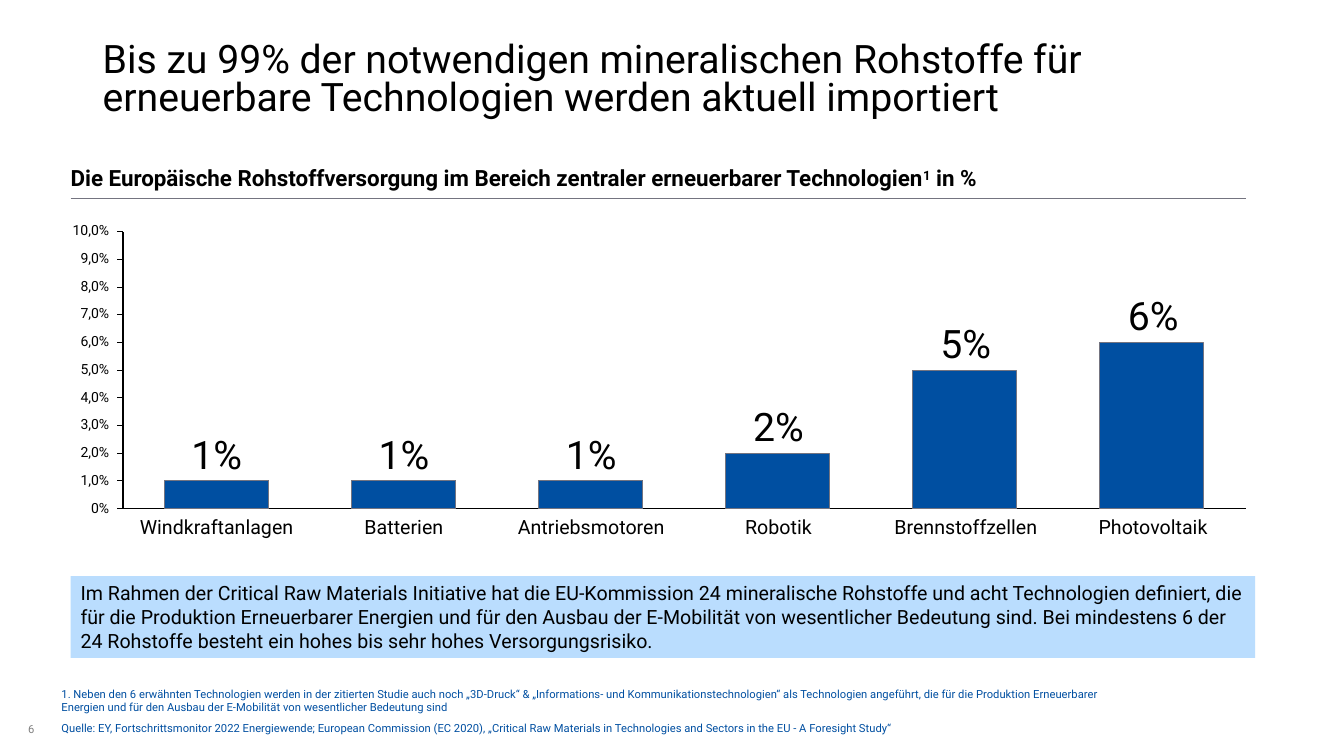
import pptx
import pptx.chart.data
import pptx.dml.color
import pptx.enum.chart
import pptx.enum.shapes
import pptx.enum.text
import pptx.oxml
import pptx.oxml.ns
import pptx.util

Cm, Pt = pptx.util.Cm, pptx.util.Pt
Align, Anchor = pptx.enum.text.PP_ALIGN, pptx.enum.text.MSO_ANCHOR
FONT = "Roboto"
HEX = {"black": "000000", "blue": "004FA1", "pale": "BADDFE", "line": "747480", "grey": "808080"}
RGB = {name: pptx.dml.color.RGBColor.from_string(code) for name, code in HEX.items()}

deck = pptx.Presentation()
deck.slide_width, deck.slide_height = Cm(33.87), Cm(19.05)
slide = deck.slides.add_slide(deck.slide_layouts[6])


def write(box, lines, size, color="black", align=Align.LEFT, anchor=Anchor.BOTTOM, pad=(0, 0, 0, 0)):
    """Fill a shape with paragraphs; each line is a list of runs."""
    frame = box.text_frame
    frame.word_wrap, frame.vertical_anchor = True, anchor
    frame.margin_left, frame.margin_top, frame.margin_right, frame.margin_bottom = map(Cm, pad)
    for i, texts in enumerate(lines):
        para = frame.paragraphs[0] if i == 0 else frame.add_paragraph()
        para.alignment = align
        for text in texts:
            run = para.add_run()
            run.text = text
            run.font.name, run.font.size = FONT, Pt(size)
            run.font.color.rgb = RGB[color]
    return frame.paragraphs


def label(x, y, w, h, lines, size, **style):
    """Add a text box, with lengths in centimetres."""
    return write(slide.shapes.add_textbox(Cm(x), Cm(y), Cm(w), Cm(h)), lines, size, **style)


INSET = (0.25, 0.13, 0.25, 0.13)

# Title and chart heading
title = label(2.34, 0.53, 26.49, 2.59, [[
    "Bis zu 99% der notwendigen mineralischen Rohstoffe für erneuerbare Technologien werden aktuell importiert"
]], 28, pad=INSET)
title[0].line_spacing = 0.8

head = label(1.78, 4.11, 29.62, 0.89, [[
    "Die Europäische Rohstoffversorgung im Bereich zentraler erneuerbarer Technologien", "1", " in %"
]], 16, pad=(0, 0, 0, 0.18))
for run in head[0].runs:
    run.font.bold = True
head[0].runs[1].font._element.set("baseline", "30000")

rule = slide.shapes.add_connector(pptx.enum.shapes.MSO_CONNECTOR.STRAIGHT, Cm(1.78), Cm(5), Cm(31.4), Cm(5))
rule.line.color.rgb, rule.line.width = RGB["line"], Pt(0.75)
rule._element.spPr.append(pptx.oxml.parse_xml(f'<a:effectLst {pptx.oxml.ns.nsdecls("a")}/>'))

# Column chart
data = pptx.chart.data.CategoryChartData()
data.categories = ["1", "2", "3", "4", "5", "6"]
data.add_series("Series 1", [17, 17, 17, 33, 83, 100])
chart = slide.shapes.add_chart(
    pptx.enum.chart.XL_CHART_TYPE.COLUMN_STACKED, Cm(2.87), Cm(5.61), Cm(28.75), Cm(7.44), data).chart
chart.has_legend = chart.has_title = False
chart.font.name, chart.font.size = FONT, Pt(10)
chart.font.color.rgb = RGB["black"]

plot = chart.plots[0]
plot.gap_width, plot.overlap, plot.vary_by_categories = 80, 100, False
bars = plot.series[0].format
bars.fill.solid()
bars.fill.fore_color.rgb = RGB["blue"]
bars.line.color.rgb, bars.line.width = RGB["line"], Pt(0.75)

Tick = pptx.enum.chart.XL_TICK_MARK
for axis, mark in ((chart.category_axis, Tick.NONE), (chart.value_axis, Tick.OUTSIDE)):
    axis.major_tick_mark, axis.minor_tick_mark = mark, Tick.NONE
    axis.tick_label_position = pptx.enum.chart.XL_TICK_LABEL_POSITION.NONE
    axis.has_major_gridlines = False
    axis.format.line.color.rgb, axis.format.line.width = RGB["black"], Pt(0.75)
scale = chart.value_axis
scale.minimum_scale, scale.maximum_scale, scale.major_unit = 0, 167, 16.7

area = chart._chartSpace.chart.plotArea
for old in area.findall(pptx.oxml.ns.qn("c:layout")):
    area.remove(old)
parts = "".join(f'<c:{tag} val="{val}"/>' for tag, val in (
    ("layoutTarget", "inner"), ("xMode", "edge"), ("yMode", "edge"),
    ("x", 0.008), ("y", 0.031), ("w", 0.984), ("h", 0.938)))
area.insert(0, pptx.oxml.parse_xml(
    f'<c:layout {pptx.oxml.ns.nsdecls("c")}><c:manualLayout>{parts}</c:manualLayout></c:layout>'))

# Labels around the plot
LEFT, BASE, COL, STEP = 3.1, 12.82, 4.72, 0.7
for n in range(11):
    text = f"{n},0%" if n else "0%"
    label(1.55, BASE - n * STEP - 0.24, 1.2, 0.43, [[text]], 10, align=Align.RIGHT, anchor=Anchor.MIDDLE)

groups = [("Windkraftanlagen", 1), ("Batterien", 1), ("Antriebsmotoren", 1),
          ("Robotik", 2), ("Brennstoffzellen", 5), ("Photovoltaik", 6)]
for i, (name, share) in enumerate(groups):
    mid = LEFT + COL * (i + 0.5)
    label(mid - 2.2, 12.98, 4.4, 0.58, [[name]], 14, align=Align.CENTER, anchor=Anchor.TOP)
    label(mid - 1, BASE - share * STEP - 1.28, 2, 1.19, [[f"{share}%"]], 28, align=Align.CENTER)

# Summary banner
banner = slide.shapes.add_shape(
    pptx.enum.shapes.MSO_SHAPE.RECTANGLE, Cm(1.78), Cm(14.52), Cm(29.85), Cm(2.06))
banner.shadow.inherit = False
banner.fill.solid()
banner.fill.fore_color.rgb = RGB["pale"]
banner.line.fill.background()
write(banner, [[
    "Im Rahmen der Critical Raw Materials Initiative hat die EU-Kommission 24 mineralische Rohstoffe und acht "
    "Technologien definiert, die für die Produktion Erneuerbarer Energien und für den Ausbau der E-Mobilität von "
    "wesentlicher Bedeutung sind. Bei mindestens 6 der 24 Rohstoffe besteht ein hohes bis sehr hohes "
    "Versorgungsrisiko."
]], 14, anchor=Anchor.TOP, pad=INSET)

# Footer
label(0.46, 18.03, 0.84, 0.64, [["6"]], 8, color="grey", pad=INSET)
notes = [
    (17.3, 0.69, [
        ["1. Neben den 6 erwähnten Technologien werden in der zitierten Studie auch noch „3D-Druck“ & "
         "„Informations- und Kommunikationstechnologien“ als Technologien angeführt, die für die Produktion "
         "Erneuerbarer"],
        ["Energien und für den Ausbau der E-Mobilität von wesentlicher Bedeutung sind"]]),
    (18.19, 0.33, [
        ["Quelle: EY, Fortschrittsmonitor 2022 Energiewende; European Commission (EC 2020), „Critical Raw "
         "Materials in Technologies and Sectors in the EU - A Foresight Study“"]]),
]
for top, high, lines in notes:
    for para in label(1.55, top, 28.58, high, lines, 8, color="blue"):
        props = para._p.get_or_add_pPr()
        props.set("marL", str(Cm(0.57)))
        props.set("indent", str(Cm(-0.57)))

deck.save("out.pptx")
